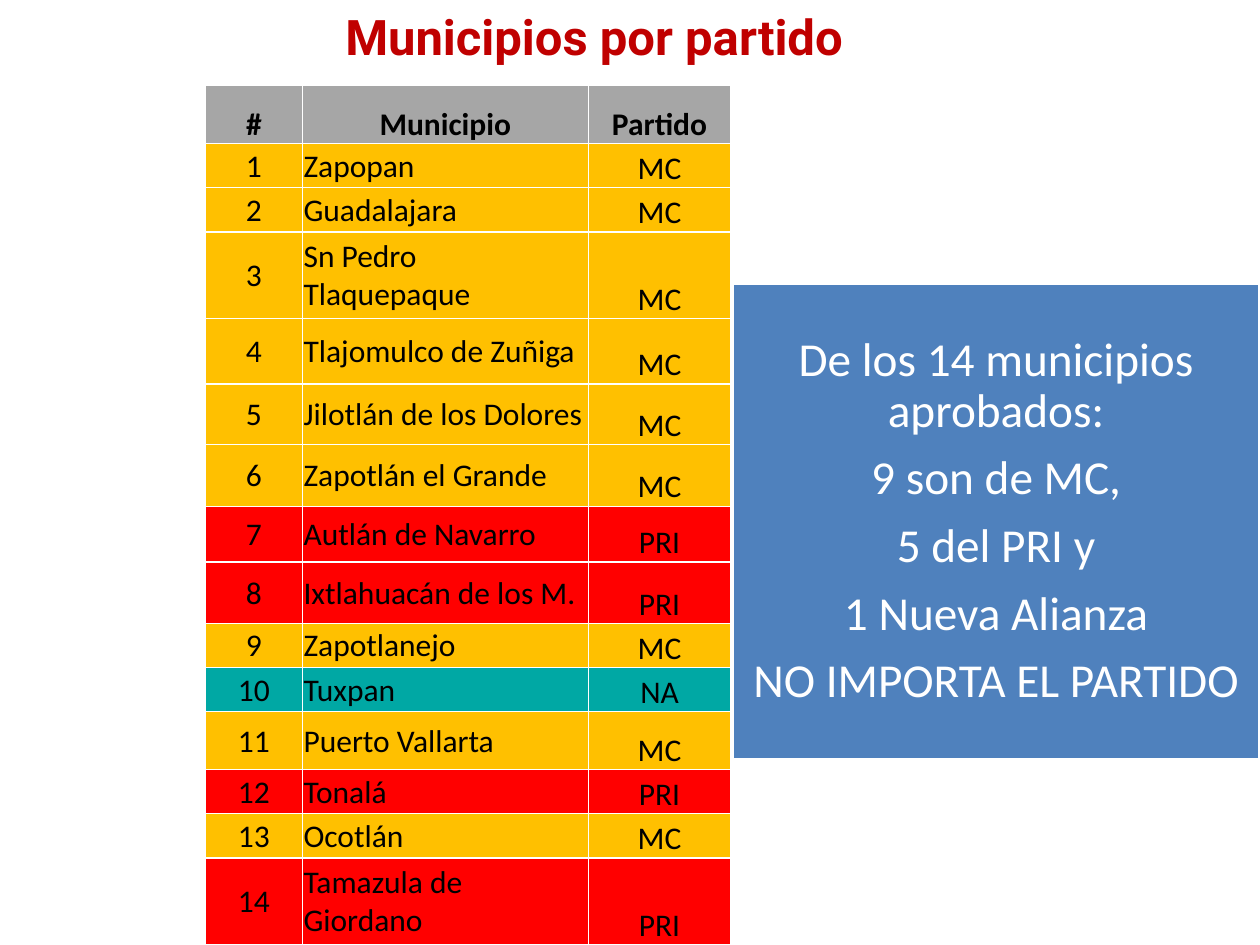
"""Build a slide listing approved municipalities by party, with a summary panel."""
from dataclasses import dataclass
from typing import Any

import lxml.etree
import pptx
import pptx.dml.color
import pptx.enum.shapes
import pptx.enum.text
import pptx.oxml.ns
import pptx.util

Inches = pptx.util.Inches
Pt = pptx.util.Pt
ALIGN = pptx.enum.text.PP_ALIGN
ANCHOR = pptx.enum.text.MSO_ANCHOR

COLORS = {
    "title": "C00000",
    "header": "A6A6A6",
    "MC": "FFC000",
    "PRI": "FF0000",
    "NA": "00A8A4",
    "panel": "4F81BD",
    "light": "FFFFFF",
    "dark": "000000",
}


@dataclass(frozen=True)
class Municipality:
    name: str
    party: str
    height: float


@dataclass(frozen=True)
class Column:
    heading: str
    width: float
    align: Any
    anchor: Any


MUNICIPALITIES = [
    Municipality("Zapopan", "MC", 0.35),
    Municipality("Guadalajara", "MC", 0.35),
    Municipality("Sn Pedro Tlaquepaque", "MC", 0.69),
    Municipality("Tlajomulco de Zuñiga", "MC", 0.52),
    Municipality("Jilotlán de los Dolores", "MC", 0.48),
    Municipality("Zapotlán el Grande", "MC", 0.49),
    Municipality("Autlán de Navarro", "PRI", 0.44),
    Municipality("Ixtlahuacán de los M.", "PRI", 0.49),
    Municipality("Zapotlanejo", "MC", 0.35),
    Municipality("Tuxpan", "NA", 0.35),
    Municipality("Puerto Vallarta", "MC", 0.46),
    Municipality("Tonalá", "PRI", 0.35),
    Municipality("Ocotlán", "MC", 0.35),
    Municipality("Tamazula de Giordano", "PRI", 0.69),
]
COLUMNS = [
    Column("#", 0.77, ALIGN.CENTER, ANCHOR.MIDDLE),
    Column("Municipio", 2.27, ALIGN.LEFT, ANCHOR.MIDDLE),
    Column("Partido", 1.13, ALIGN.CENTER, ANCHOR.BOTTOM),
]
HEADER_HEIGHT = 0.46
SUMMARY = [
    "De los 14 municipios aprobados:",
    "9 son de MC,",
    "5 del PRI y",
    "1 Nueva Alianza",
    "NO IMPORTA EL PARTIDO",
]
CELL_FORMAT = {
    "margin_left": Inches(0.01),
    "margin_right": Inches(0.01),
    "margin_top": Inches(0.01),
    "margin_bottom": 0,
}
PANEL_FORMAT = {
    "margin_left": Inches(0.11),
    "margin_right": Inches(0.11),
    "margin_top": Inches(0.11),
    "margin_bottom": Inches(0.11),
    "vertical_anchor": ANCHOR.MIDDLE,
    "word_wrap": True,
}


def apply_format(target: Any, values: dict) -> None:
    """Set each named attribute on the target."""
    for name, value in values.items():
        setattr(target, name, value)


def rgb(key: str) -> pptx.dml.color.RGBColor:
    """Return the named palette colour."""
    return pptx.dml.color.RGBColor.from_string(COLORS[key])


def paint(fill: Any, key: str) -> None:
    """Apply a solid palette fill."""
    fill.solid()
    fill.fore_color.rgb = rgb(key)


def style_font(font: Any, size: float, key: str, name: str = "Calibri", bold: bool = False) -> None:
    """Set the typeface, size, weight and colour of a font."""
    apply_format(font, {"name": name, "size": Pt(size), "bold": bold})
    font.color.rgb = rgb(key)


def add_borders(cell: Any) -> None:
    """Give a cell thin light borders on all sides."""
    qn = pptx.oxml.ns.qn
    properties = cell._tc.get_or_add_tcPr()
    for side in ("lnL", "lnR", "lnT", "lnB"):
        line = lxml.etree.SubElement(properties, qn(f"a:{side}"), w=str(Pt(1)))
        solid = lxml.etree.SubElement(line, qn("a:solidFill"))
        lxml.etree.SubElement(solid, qn("a:srgbClr"), val=COLORS["light"])


def fill_cell(cell: Any, text: str, key: str, align: Any, anchor: Any, bold: bool) -> None:
    """Write and format one table cell."""
    apply_format(cell, CELL_FORMAT | {"text": text, "vertical_anchor": anchor})
    add_borders(cell)
    paint(cell.fill, key)
    paragraph = cell.text_frame.paragraphs[0]
    paragraph.alignment = align
    style_font(paragraph.runs[0].font, 18, "dark", bold=bold)


def add_title(slide: Any) -> None:
    """Place the slide title."""
    title = slide.shapes.title
    apply_format(title, {"left": Inches(2.64), "top": 0, "width": Inches(4.34), "height": Inches(0.57)})
    frame = title.text_frame
    apply_format(frame, {
        "text": "Municipios por partido",
        "vertical_anchor": ANCHOR.TOP,
        "word_wrap": True,
        "auto_size": pptx.enum.text.MSO_AUTO_SIZE.SHAPE_TO_FIT_TEXT,
    })
    frame.paragraphs[0].alignment = ALIGN.LEFT
    style_font(frame.paragraphs[0].runs[0].font, 28, "title", "Roboto", True)


def add_municipality_table(slide: Any) -> None:
    """Draw the table with one row per municipality, coloured by party."""
    heights = [HEADER_HEIGHT] + [town.height for town in MUNICIPALITIES]
    widths = [column.width for column in COLUMNS]
    table = slide.shapes.add_table(
        len(heights), len(widths), Inches(1.63), Inches(0.68),
        Inches(sum(widths)), Inches(sum(heights)),
    ).table
    apply_format(table, {"first_row": False, "horz_banding": False})
    for row, height in zip(table.rows, heights):
        row.height = Inches(height)
    for index, column in enumerate(COLUMNS):
        table.columns[index].width = Inches(column.width)
        fill_cell(table.cell(0, index), column.heading, "header", ALIGN.CENTER, ANCHOR.BOTTOM, True)
    for number, town in enumerate(MUNICIPALITIES, 1):
        for index, text in enumerate((str(number), town.name, town.party)):
            column = COLUMNS[index]
            fill_cell(table.cell(number, index), text, town.party, column.align, column.anchor, False)


def add_summary_panel(slide: Any) -> None:
    """Draw the panel summing up the parties."""
    panel = slide.shapes.add_shape(
        pptx.enum.shapes.MSO_SHAPE.RECTANGLE,
        Inches(5.81), Inches(2.25), Inches(4.19), Inches(3.78),
    )
    panel.shadow.inherit = False
    paint(panel.fill, "panel")
    paint(panel.line.fill, "light")
    panel.line.width = Pt(2)
    frame = panel.text_frame
    apply_format(frame, PANEL_FORMAT | {"text": "\n".join(SUMMARY)})
    for paragraph in frame.paragraphs:
        apply_format(paragraph, {"alignment": ALIGN.CENTER, "line_spacing": 0.9, "space_after": Pt(9.45)})
        style_font(paragraph.runs[0].font, 27, "light")


def main() -> None:
    """Assemble and save the presentation."""
    presentation = pptx.Presentation()
    apply_format(presentation, {"slide_width": Inches(10), "slide_height": Inches(7.5)})
    slide = presentation.slides.add_slide(presentation.slide_layouts[5])
    add_title(slide)
    add_municipality_table(slide)
    add_summary_panel(slide)
    presentation.save("out.pptx")


if __name__ == "__main__":
    main()
